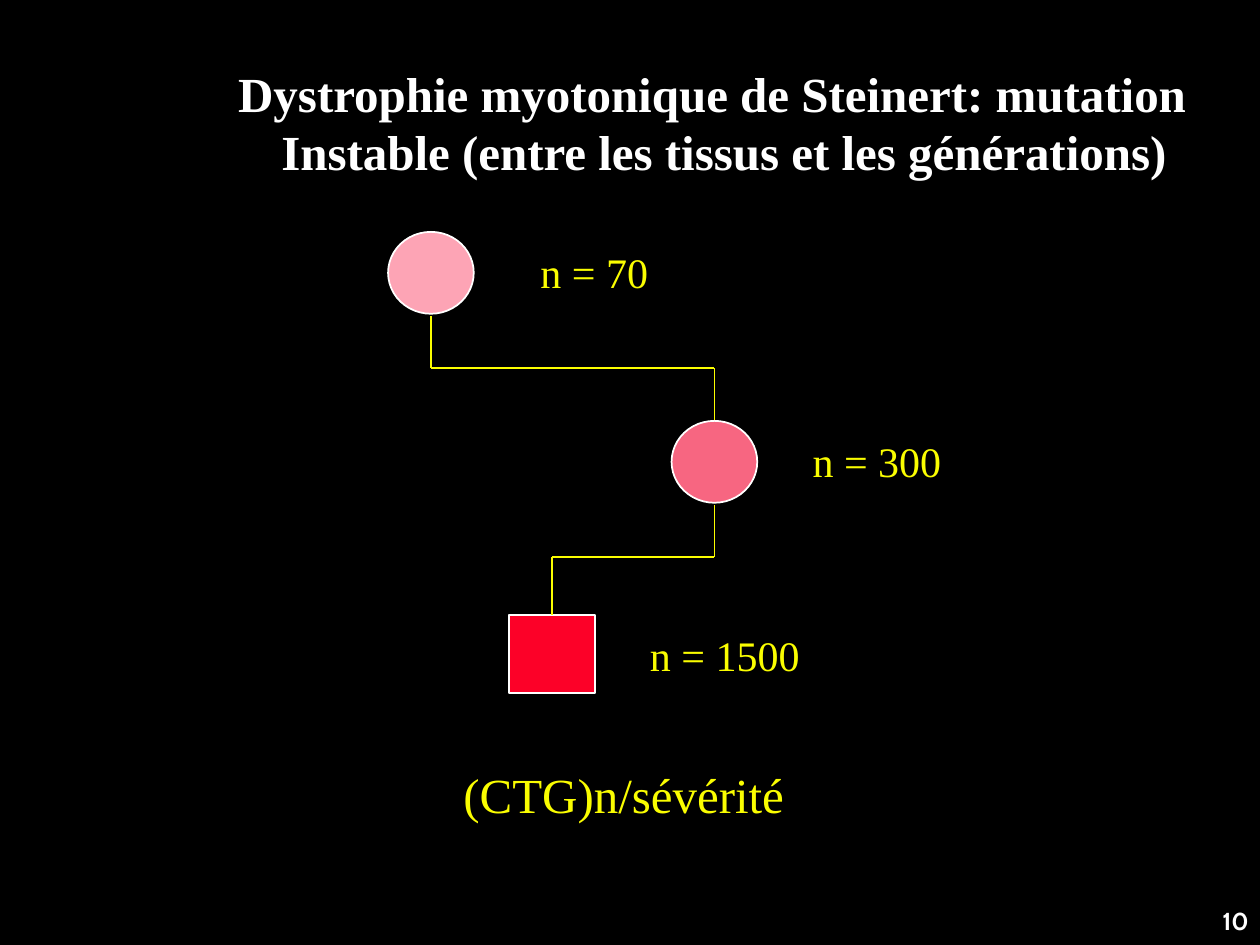
from lxml.etree import SubElement
from pptx import Presentation
from pptx.dml.color import RGBColor
from pptx.enum.shapes import MSO_CONNECTOR, MSO_SHAPE
from pptx.enum.text import MSO_ANCHOR, MSO_AUTO_SIZE, PP_ALIGN
from pptx.oxml.ns import qn
from pptx.util import Inches, Pt

COLORS = {"background": "000000", "white": "FFFFFF", "yellow": "FAFD00",
          "light": "FDA4B5", "medium": "F76681", "strong": "FC0128"}
SERIF = "Times New Roman"
SYMBOL_WIDTH = 0.68
LINE_GAP = 0.02

TITLE = ["Dystrophie myotonique de Steinert: mutation",
         "Instable (entre les tissus et les générations)"]
# Generations: shape, colour, centre x, top, height, label, label left and width
GENERATIONS = [
    (MSO_SHAPE.OVAL, "light", 3.42, 1.84, 0.65, "n = 70", 4.19, 1.05),
    (MSO_SHAPE.OVAL, "medium", 5.67, 3.34, 0.65, "n = 300", 6.35, 1.22),
    (MSO_SHAPE.RECTANGLE, "strong", 4.38, 4.88, 0.62, "n = 1500", 5.06, 1.39),
]

presentation = Presentation()
presentation.slide_width, presentation.slide_height = Inches(10), Inches(7.5)
slide = presentation.slides.add_slide(presentation.slide_layouts[5])


def color(name):
    return RGBColor.from_string(COLORS[name])


def write(shape, lines, size=24, font=SERIF, fill="yellow", bold=False,
          aligns=(PP_ALIGN.LEFT,), wrap=False):
    frame = shape.text_frame
    frame.word_wrap = wrap
    frame.auto_size = MSO_AUTO_SIZE.NONE
    frame.vertical_anchor = MSO_ANCHOR.TOP
    frame.text = "\n".join(lines)
    for paragraph, align in zip(frame.paragraphs, aligns):
        paragraph.alignment = align
        paragraph.font.size = Pt(size)
        paragraph.font.name = font
        paragraph.font.bold = bold
        paragraph.font.color.rgb = color(fill)


def add_text(left, top, width, height, text, **style):
    box = slide.shapes.add_textbox(*map(Inches, (left, top, width, height)))
    write(box, [text], **style)


def add_line(x1, y1, x2, y2):
    line = slide.shapes.add_connector(
        MSO_CONNECTOR.STRAIGHT, *map(Inches, (x1, y1, x2, y2)))
    line.line.color.rgb = color("yellow")
    line.line.width = Pt(1)
    SubElement(line._element.spPr, qn("a:effectLst"))
    return line


# Background and title
slide.background.fill.solid()
slide.background.fill.fore_color.rgb = color("background")
title = slide.shapes.title
title.left, title.top, title.width, title.height = map(
    Inches, (1.79, 0.45, 7.91, 1.04))
write(title, TITLE, size=28, fill="white", bold=True, wrap=True,
      aligns=(PP_ALIGN.LEFT, PP_ALIGN.CENTER))

# Family members with their repeat counts
symbols = []
for kind, fill, center, top, height, label, label_left, label_width in GENERATIONS:
    symbol = slide.shapes.add_shape(kind, *map(
        Inches, (center - SYMBOL_WIDTH / 2, top, SYMBOL_WIDTH, height)))
    symbol.shadow.inherit = False
    symbol.fill.solid()
    symbol.fill.fore_color.rgb = color(fill)
    symbol.line.color.rgb = color("white")
    symbol.line.width = Pt(1)
    symbols.append(symbol)
    add_text(label_left, top + 0.07, label_width, 0.5, label)

# Descent lines: down from the parent, across, down to the child
for parent, child, symbol in zip(GENERATIONS, GENERATIONS[1:], symbols[1:]):
    parent_x, child_x, child_top = parent[2], child[2], child[3]
    bottom = parent[3] + parent[4]
    middle = bottom + 0.43
    add_line(parent_x, bottom + LINE_GAP, parent_x, middle)
    add_line(parent_x, middle, child_x, middle)
    drop = add_line(child_x, middle, child_x, child_top - LINE_GAP / 2)
    if child[0] == MSO_SHAPE.RECTANGLE:
        drop.end_connect(symbol, 0)

# Conclusion and slide number
add_text(3.58, 6.02, 2.74, 0.56, "(CTG)n/sévérité", size=28)
add_text(7.68, 7.14, 2.33, 0.52, "10", size=14, font="Cabin", fill="white",
         bold=True, aligns=(PP_ALIGN.RIGHT,), wrap=True)

presentation.save("out.pptx")
